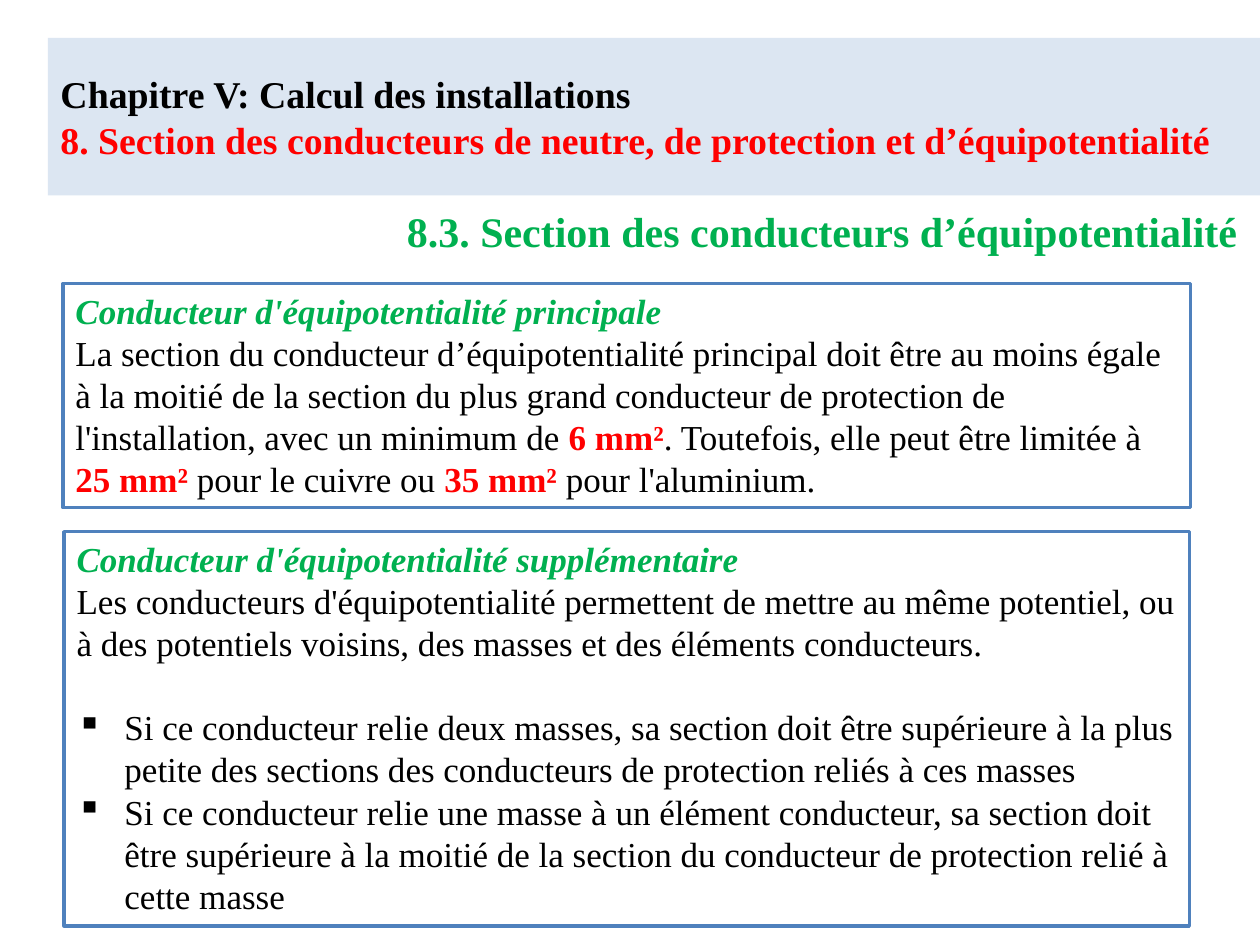
from dataclasses import dataclass

from lxml.etree import SubElement
from pptx import Presentation
from pptx.dml.color import RGBColor as Rgb
from pptx.enum.shapes import MSO_SHAPE as Preset
from pptx.enum.text import MSO_ANCHOR as Anchor, MSO_AUTO_SIZE as AutoSize, PP_ALIGN as Align
from pptx.oxml.ns import qn
from pptx.util import Inches, Pt


@dataclass(frozen=True)
class Theme:
    """Colours, type sizes and spacing of the slide."""
    face: str = "Times New Roman"
    ink: Rgb = Rgb.from_string("000000")
    alert: Rgb = Rgb.from_string("FF0000")
    accent: Rgb = Rgb.from_string("00B050")
    paper: Rgb = Rgb.from_string("FFFFFF")
    band: Rgb = Rgb.from_string("DCE6F2")
    border: Rgb = Rgb.from_string("4F81BD")
    chapter: float = 21.6
    section: float = 24
    body: float = 20
    rule: float = 2
    gap: float = 24
    hang: float = 0.38


THEME = Theme()
COLUMNS, ROWS = 100, 75
STYLES = {
    "plain": {"bold": False, "italic": False, "color": THEME.ink},
    "key": {"bold": True, "italic": False, "color": THEME.alert},
    "strong": {"bold": True, "italic": False, "color": THEME.ink},
    "heading": {"bold": True, "italic": True, "color": THEME.accent},
    "section": {"bold": True, "italic": False, "color": THEME.accent},
}


def apply(target, formats):
    """Set every attribute named in formats on target."""
    for name, value in formats.items():
        setattr(target, name, value)


def place(deck, box):
    """Turn a box in grid columns and rows into slide lengths."""
    left, top, width, height = box
    column, row = deck.slide_width / COLUMNS, deck.slide_height / ROWS
    return [round(n) for n in (left * column, top * row, width * column, height * row)]


def write(paragraph, pieces, size):
    """Fill a paragraph with (style, text) pieces; None is a line break."""
    paragraph.alignment = Align.LEFT
    for piece in pieces:
        if piece is None:
            paragraph.add_line_break()
            continue
        style, text = piece
        formats = dict(STYLES[style])
        run = paragraph.add_run()
        run.text = text
        run.font.color.rgb = formats.pop("color")
        apply(run.font, {"name": THEME.face, "size": Pt(size), **formats})


def add_bullet(paragraph):
    """Give a paragraph a square bullet with a hanging indent."""
    properties = paragraph._p.get_or_add_pPr()
    properties.set("marL", str(Inches(THEME.hang)))
    properties.set("indent", str(-Inches(THEME.hang)))
    SubElement(properties, qn("a:buChar")).set("char", "▪")


def add_title(deck, slide, box, pieces):
    """Place the chapter band in the title placeholder."""
    title = slide.shapes.title
    apply(title, dict(zip(("left", "top", "width", "height"), place(deck, box))))
    title.fill.solid()
    title.fill.fore_color.rgb = THEME.band
    apply(title.text_frame, {"word_wrap": True, "auto_size": AutoSize.NONE,
                             "vertical_anchor": Anchor.MIDDLE})
    write(title.text_frame.paragraphs[0], pieces, THEME.chapter)


def add_section(deck, slide, box, text):
    """Place the section heading under the band."""
    frame = slide.shapes.add_textbox(*place(deck, box)).text_frame
    apply(frame, {"word_wrap": True, "auto_size": AutoSize.SHAPE_TO_FIT_TEXT})
    write(frame.paragraphs[0], [("section", text)], THEME.section)


def add_panel(deck, slide, box, paragraphs, bullets=()):
    """Place a bordered panel of paragraphs followed by bullets."""
    panel = slide.shapes.add_shape(Preset.RECTANGLE, *place(deck, box))
    panel.shadow.inherit = False
    panel.fill.solid()
    panel.fill.fore_color.rgb = THEME.paper
    panel.line.color.rgb = THEME.border
    panel.line.width = Pt(THEME.rule)
    frame = panel.text_frame
    apply(frame, {"word_wrap": True, "auto_size": AutoSize.SHAPE_TO_FIT_TEXT,
                  "vertical_anchor": Anchor.TOP})
    for index, pieces in enumerate(paragraphs):
        paragraph = frame.add_paragraph() if index else frame.paragraphs[0]
        write(paragraph, pieces, THEME.body)
    for index, text in enumerate(bullets):
        paragraph = frame.add_paragraph()
        paragraph.space_before = Pt(0 if index else THEME.gap)
        add_bullet(paragraph)
        write(paragraph, [("plain", text)], THEME.body)


def main():
    """Build and save the slide."""
    deck = Presentation()
    deck.slide_width, deck.slide_height = Inches(10), Inches(7.5)
    slide = deck.slides.add_slide(deck.slide_layouts[5])
    add_title(deck, slide, (3.8, 3, 96.2, 12.5), [
        ("strong", "Chapitre V: Calcul des installations"), None,
        ("key", "8. Section des conducteurs de neutre, de protection et d’équipotentialité"),
    ])
    add_section(deck, slide, (31.3, 15.8, 68.5, 5),
                "8.3. Section des conducteurs d’équipotentialité")
    add_panel(deck, slide, (5, 22.5, 89.5, 17.8), [[
        ("heading", "Conducteur d'équipotentialité principale"), None,
        ("plain", "La section du conducteur d’équipotentialité principal doit être au moins "
                  "égale à la moitié de la section du plus grand conducteur de protection de "
                  "l'installation, avec un minimum de "),
        ("key", "6 mm²"), ("plain", ". Toutefois, elle peut être limitée à "),
        ("key", "25 mm² "), ("plain", "pour le cuivre ou "),
        ("key", "35 mm² "), ("plain", "pour l'aluminium."),
    ]])
    add_panel(deck, slide, (5.1, 42.2, 89.3, 31.3), [
        [("heading", "Conducteur d'équipotentialité supplémentaire")],
        [("plain", "Les conducteurs d'équipotentialité permettent de mettre au même potentiel, "
                   "ou à des potentiels voisins, des masses et des éléments conducteurs.")],
    ], [
        "Si ce conducteur relie deux masses, sa section doit être supérieure à la plus petite "
        "des sections des conducteurs de protection reliés à ces masses",
        "Si ce conducteur relie une masse à un élément conducteur, sa section doit être "
        "supérieure à la moitié de la section du conducteur de protection relié à cette masse",
    ])
    deck.save("out.pptx")


if __name__ == "__main__":
    main()
